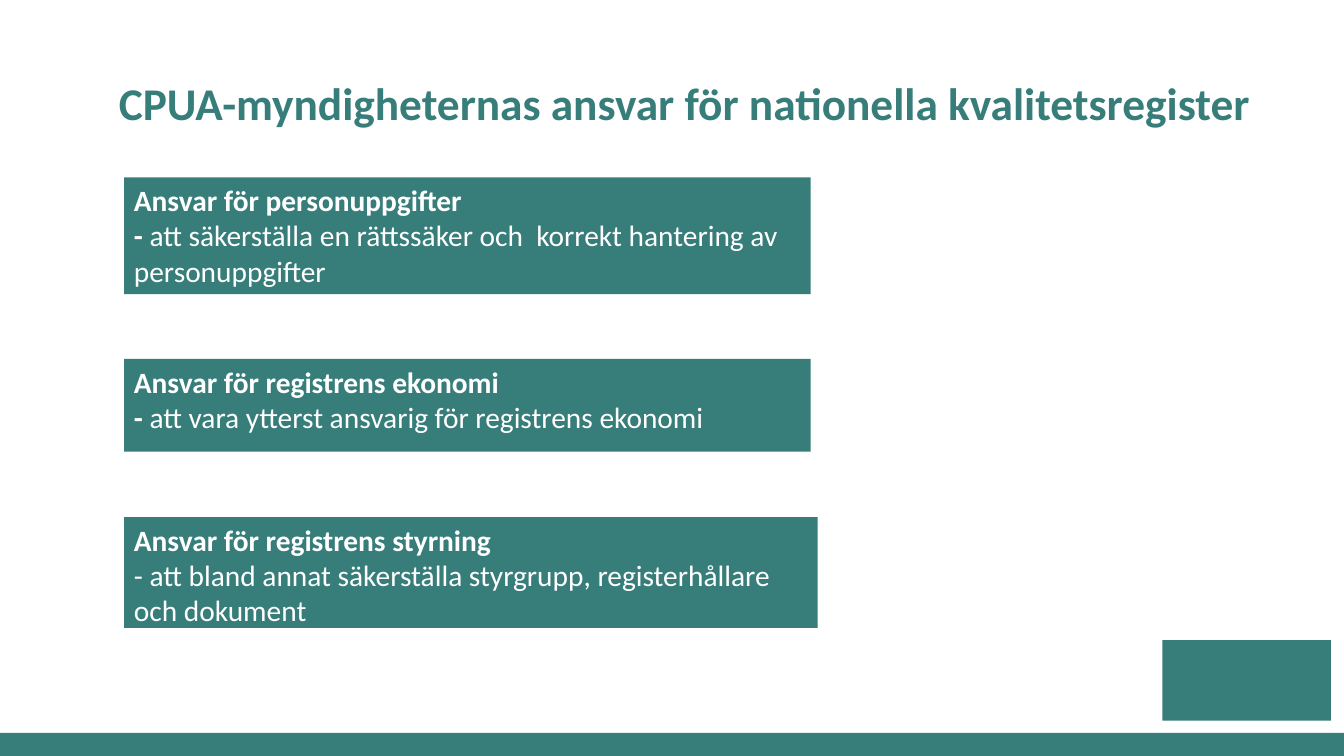
from dataclasses import dataclass

from pptx import Presentation
from pptx.dml.color import RGBColor
from pptx.enum.shapes import MSO_SHAPE
from pptx.enum.text import MSO_ANCHOR, PP_ALIGN
from pptx.shapes.autoshape import Shape
from pptx.slide import Slide
from pptx.text.text import _Run as Run
from pptx.util import Inches, Length, Pt


@dataclass(frozen=True)
class Theme:
    font: str = "Calibri"
    teal: RGBColor = RGBColor(0x37, 0x7D, 0x7A)
    white: RGBColor = RGBColor(0xFF, 0xFF, 0xFF)
    title: Length = Pt(32.4)
    body: Length = Pt(21)


@dataclass(frozen=True)
class Duty:
    top: float
    width: float
    height: float
    head: str
    dash: str  # bold lead-in of the second paragraph
    text: str


THEME = Theme()
WIDTH, HEIGHT = 13.33, 7.5
BAND = 0.23
LEFT = 1.23
TITLE = "CPUA-myndigheternas ansvar för nationella kvalitetsregister"

DUTIES = [
    Duty(1.76, 6.81, 1.16, "Ansvar för personuppgifter", "- ",
         "att säkerställa en rättssäker och  korrekt hantering av personuppgifter"),
    Duty(3.56, 6.81, 0.92, "Ansvar för registrens ekonomi", "- ",
         "att vara ytterst ansvarig för registrens ekonomi"),
    Duty(5.13, 6.88, 1.1, "Ansvar för registrens styrning", "",
         "- att bland annat säkerställa styrgrupp, registerhållare och dokument"),
]


def style(run: Run, size: Length, color: RGBColor, bold: bool = True) -> None:
    run.font.name = THEME.font
    run.font.size = size
    run.font.color.rgb = color
    run.font.bold = bold


def add_block(slide: Slide, left: float, top: float, width: float, height: float) -> Shape:
    block = slide.shapes.add_shape(
        MSO_SHAPE.RECTANGLE, Inches(left), Inches(top), Inches(width), Inches(height))
    block.shadow.inherit = False
    block.fill.solid()
    block.fill.fore_color.rgb = THEME.teal
    block.line.fill.background()
    return block


def add_title(slide: Slide) -> None:
    box = slide.shapes.add_textbox(
        Inches(1.08), Inches(0.67), Inches(11.78), Inches(0.67))
    frame = box.text_frame
    frame.word_wrap = True
    frame.vertical_anchor = MSO_ANCHOR.BOTTOM
    frame.text = TITLE
    para = frame.paragraphs[0]
    para.line_spacing = 0.9
    style(para.runs[0], THEME.title, THEME.teal)


def add_duty(slide: Slide, duty: Duty) -> None:
    frame = add_block(slide, LEFT, duty.top, duty.width, duty.height).text_frame
    frame.word_wrap = True
    frame.vertical_anchor = MSO_ANCHOR.TOP
    frame.text = duty.head
    head, body = frame.paragraphs[0], frame.add_paragraph()
    style(head.runs[0], THEME.body, THEME.white)
    for text, bold in ((duty.dash, True), (duty.text, False)):
        if text:
            run = body.add_run()
            run.text = text
            style(run, THEME.body, THEME.white, bold)
    for para in frame.paragraphs:
        para.alignment = PP_ALIGN.LEFT


def main() -> None:
    deck = Presentation()
    deck.slide_width, deck.slide_height = Inches(WIDTH), Inches(HEIGHT)
    slide = deck.slides.add_slide(deck.slide_layouts[6])

    # Footer band and the plain sender block
    add_block(slide, 0, HEIGHT - BAND, WIDTH, BAND)
    add_block(slide, 11.53, 6.35, 1.67, 0.8)

    # Title
    add_title(slide)

    # Areas of responsibility
    for duty in DUTIES:
        add_duty(slide, duty)

    deck.save("out.pptx")


if __name__ == "__main__":
    main()
